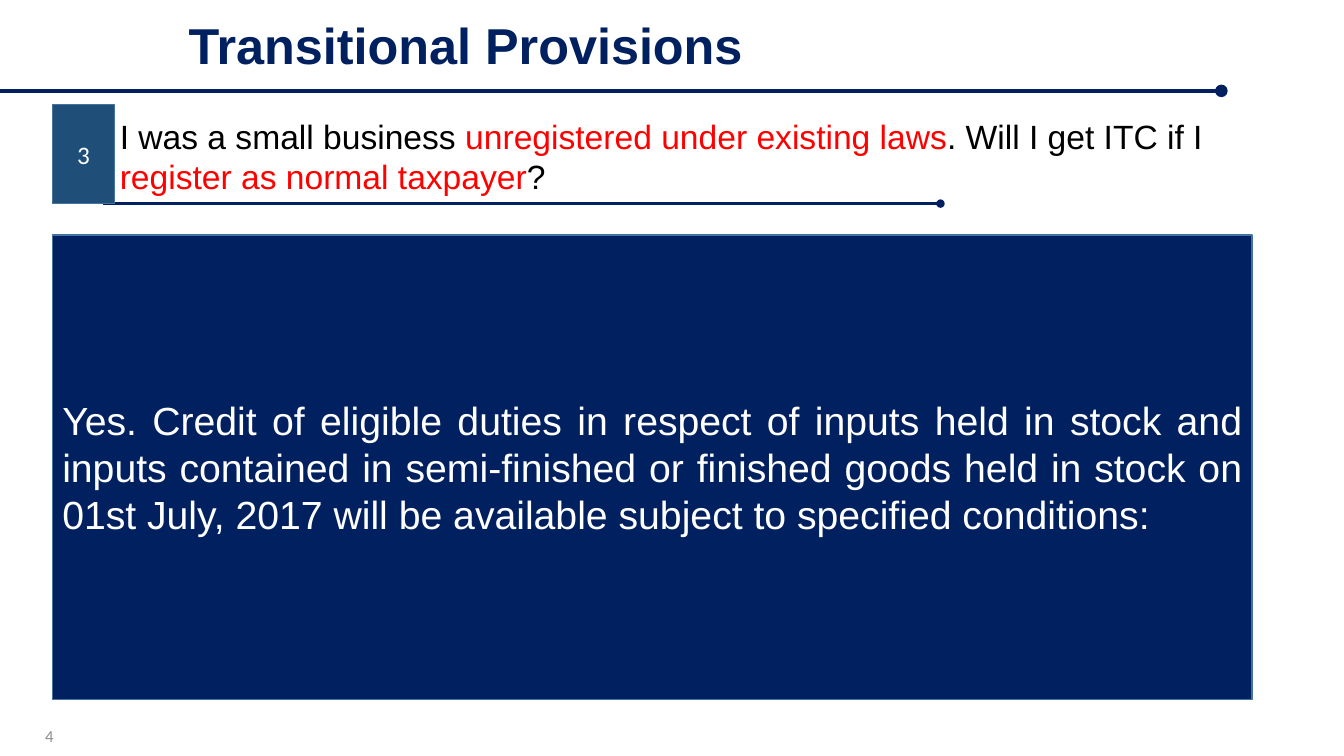
from dataclasses import dataclass

from lxml.etree import SubElement
from pptx import Presentation
from pptx.dml.color import RGBColor
from pptx.enum.shapes import MSO_CONNECTOR as Connector, MSO_SHAPE as Shape
from pptx.enum.text import MSO_ANCHOR as Anchor, MSO_AUTO_SIZE as AutoSize, PP_ALIGN as Align
from pptx.oxml.ns import qn
from pptx.util import Cm, Pt

NAVY = "002060"
STEEL = "1F4E79"
BORDER = "43739E"
WHITE = "FFFFFF"
BLACK = "000000"
RED = "FF0000"
GREY = "8C8C8C"


@dataclass
class Box:
    left: float
    top: float
    width: float
    height: float

    def lengths(self) -> tuple:
        return Cm(self.left), Cm(self.top), Cm(self.width), Cm(self.height)


@dataclass
class Style:
    size: int
    font: str = "Arial"
    align: Align = Align.LEFT
    anchor: Anchor = Anchor.MIDDLE
    bold: bool = False
    grow: bool = False


@dataclass
class Rule:
    left: float
    right: float
    y: float
    weight: float


@dataclass
class Panel:
    box: Box
    fill: str
    text: str
    style: Style


def rgb(color: str) -> RGBColor:
    return RGBColor.from_string(color)


def write(sp, parts: list[tuple[str, str]], style: Style) -> None:
    tf = sp.text_frame
    tf.word_wrap = True
    tf.auto_size = AutoSize.SHAPE_TO_FIT_TEXT if style.grow else AutoSize.NONE
    tf.vertical_anchor = style.anchor
    p = tf.paragraphs[0]
    p.alignment = style.align
    for text, color in parts:
        r = p.add_run()
        r.text = text
        r.font.size = Pt(style.size)
        r.font.name = style.font
        r.font.bold = style.bold
        r.font.color.rgb = rgb(color)


def add_rule(slide, rule: Rule) -> None:
    y = Cm(rule.y)
    line = slide.shapes.add_connector(Connector.STRAIGHT, Cm(rule.left), y, Cm(rule.right), y)
    line.line.color.rgb = rgb(NAVY)
    line.line.width = Pt(rule.weight)
    SubElement(line.line._get_or_add_ln(), qn("a:tailEnd"), type="oval")
    SubElement(line._element.spPr, qn("a:effectLst"))


def add_panel(slide, panel: Panel) -> None:
    sp = slide.shapes.add_shape(Shape.RECTANGLE, *panel.box.lengths())
    sp.shadow.inherit = False
    sp.fill.solid()
    sp.fill.fore_color.rgb = rgb(panel.fill)
    sp.line.color.rgb = rgb(BORDER)
    sp.line.width = Pt(1)
    write(sp, [(panel.text, WHITE)], panel.style)


def add_text(slide, box: Box, parts: list[tuple[str, str]], style: Style) -> None:
    write(slide.shapes.add_textbox(*box.lengths()), parts, style)


def set_title(slide, box: Box, text: str, style: Style) -> None:
    title = slide.shapes.title
    title.left, title.top, title.width, title.height = box.lengths()
    write(title, [(text, NAVY)], style)


HEADER_RULE = Rule(0, 30.78, 2.29, 3)
QUESTION_RULE = Rule(2.59, 23.7, 5.13, 2)
NUMBER = Panel(Box(1.32, 2.64, 1.57, 2.49), STEEL, "3", Style(18, "Calibri", Align.CENTER))
ANSWER = Panel(
    Box(1.32, 5.92, 30.23, 11.71),
    NAVY,
    "Yes. Credit of eligible duties in respect of inputs held in stock and inputs contained in "
    "semi-finished or finished goods held in stock on 01st July, 2017 will be available subject "
    "to specified conditions:",
    Style(28, align=Align.JUSTIFY),
)
QUESTION = [
    ("I was a small business ", BLACK),
    ("unregistered under existing laws", RED),
    (". Will I get ITC if I ", BLACK),
    ("register as normal taxpayer", RED),
    ("?", BLACK),
]


def main() -> None:
    prs = Presentation()
    prs.slide_width, prs.slide_height = Cm(33.87), Cm(19.05)
    slide = prs.slides.add_slide(prs.slide_layouts[5])
    add_rule(slide, HEADER_RULE)
    set_title(slide, Box(4.5, 0.23, 21.11, 1.8), "Transitional Provisions",
              Style(36, anchor=Anchor.TOP, bold=True, grow=True))
    add_rule(slide, QUESTION_RULE)
    add_panel(slide, NUMBER)
    add_text(slide, Box(2.77, 2.79, 29.97, 2.31), QUESTION,
             Style(24, anchor=Anchor.TOP, grow=True))
    add_panel(slide, ANSWER)
    add_text(slide, Box(-6.02, 18.03, 7.62, 1.02), [("4", GREY)],
             Style(12, "Calibri", Align.RIGHT))
    prs.save("out.pptx")


if __name__ == "__main__":
    main()
